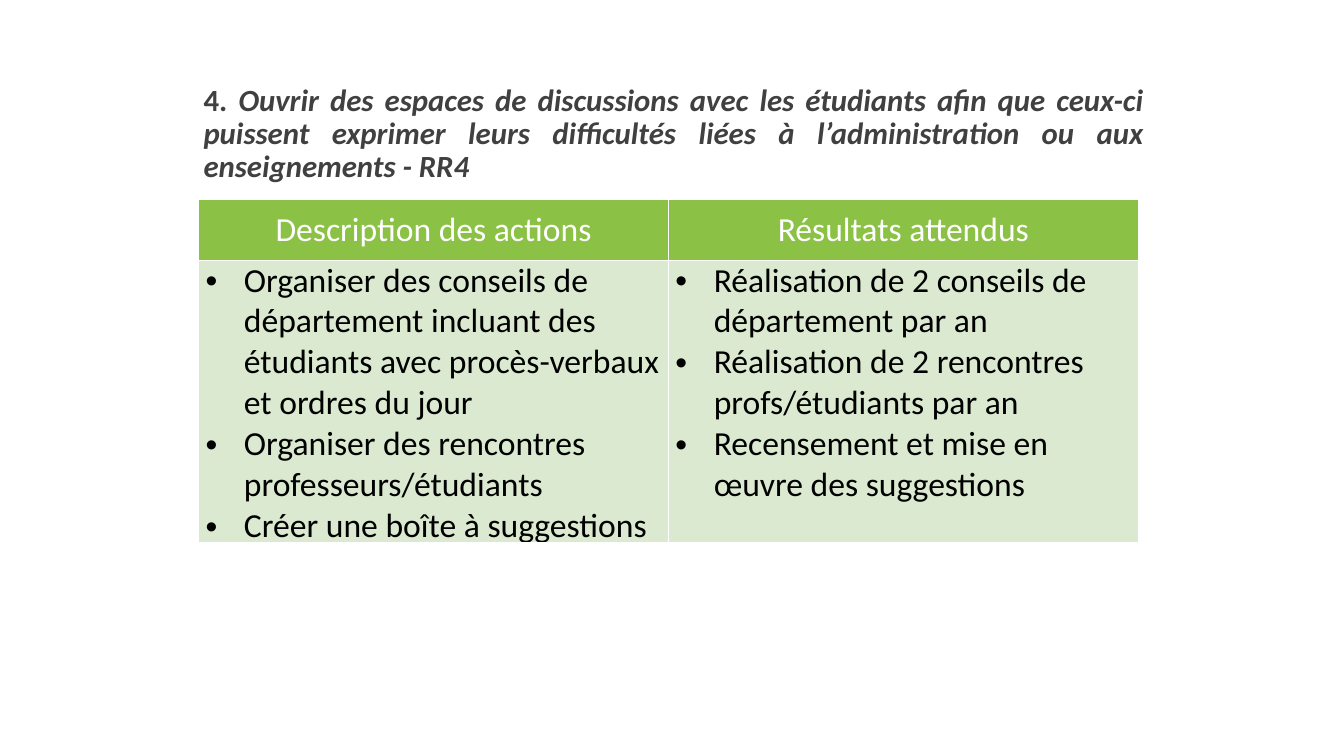
from lxml.etree import SubElement
from pptx import Presentation
from pptx.dml.color import RGBColor
from pptx.enum.text import MSO_ANCHOR, PP_ALIGN
from pptx.oxml.ns import qn
from pptx.util import Inches, Pt

WHITE = RGBColor(0xFF, 0xFF, 0xFF)
BLACK = RGBColor(0x00, 0x00, 0x00)
DARK_GREY = RGBColor(0x40, 0x40, 0x40)
GREEN = RGBColor(0x8B, 0xC1, 0x45)
PALE_GREEN = RGBColor(0xDA, 0xE9, 0xCF)
FONT = "Calibri"

OBJECTIVE_NUMBER = "4. "
OBJECTIVE = (
    "Ouvrir des espaces de discussions avec les étudiants afin que ceux-ci "
    "puissent exprimer leurs difficultés liées à l’administration ou aux "
    "enseignements - RR4"
)
COLUMNS = {
    "Description des actions": [
        "Organiser des conseils de département incluant des étudiants "
        "avec procès-verbaux et ordres du jour",
        "Organiser des rencontres professeurs/étudiants",
        "Créer une boîte à suggestions",
    ],
    "Résultats attendus": [
        "Réalisation de 2 conseils de département par an",
        "Réalisation de 2 rencontres profs/étudiants par an",
        "Recensement et mise en œuvre des suggestions",
    ],
}


def add_span(para, text, size, color, bold=False, italic=False):
    span = para.add_run()
    span.text = text
    font = span.font
    font.name, font.size, font.bold, font.italic = FONT, Pt(size), bold, italic
    font.color.rgb = color


def add_title(page, left, top, width, height):
    box = page.shapes.add_textbox(left, top, width, height)
    frame = box.text_frame
    frame.word_wrap = True
    frame.vertical_anchor = MSO_ANCHOR.MIDDLE
    para = frame.paragraphs[0]
    para.alignment = PP_ALIGN.JUSTIFY
    para.line_spacing = 0.9
    add_span(para, OBJECTIVE_NUMBER, 22, DARK_GREY, bold=True)
    add_span(para, OBJECTIVE, 22, DARK_GREY, bold=True, italic=True)


def set_bullet(para, indent):
    properties = para._p.get_or_add_pPr()
    properties.set("marL", str(indent))
    properties.set("indent", str(-indent))
    SubElement(properties, qn("a:buFont"), typeface="Arial")
    SubElement(properties, qn("a:buChar"), char="•")


def style_cell(cell, fill, side_margin, end_margin):
    """Set margins, white borders and fill; borders must precede the fill."""
    cell.margin_left = cell.margin_right = side_margin
    cell.margin_top = cell.margin_bottom = end_margin
    properties = cell._tc.get_or_add_tcPr()
    for side in ("lnL", "lnR", "lnT", "lnB"):
        line = SubElement(properties, qn(f"a:{side}"), w=str(Pt(1)))
        solid = SubElement(line, qn("a:solidFill"))
        SubElement(solid, qn("a:srgbClr"), val=str(WHITE))
    cell.fill.solid()
    cell.fill.fore_color.rgb = fill


def add_action_table(page, left, top, width, height):
    header_height = Inches(0.6)
    table = page.shapes.add_table(2, len(COLUMNS), left, top, width, height).table
    table.rows[0].height = header_height
    table.rows[1].height = height - header_height
    for column, (heading, items) in enumerate(COLUMNS.items()):
        header = table.cell(0, column)
        style_cell(header, GREEN, Inches(0.1), Inches(0.1))
        para = header.text_frame.paragraphs[0]
        para.alignment = PP_ALIGN.CENTER
        add_span(para, heading, 24, WHITE)

        body = table.cell(1, column)
        style_cell(body, PALE_GREEN, Inches(0.07), 0)
        frame = body.text_frame
        for index, item in enumerate(items):
            para = frame.add_paragraph() if index else frame.paragraphs[0]
            set_bullet(para, Inches(0.38))
            add_span(para, item, 24, BLACK)


def main():
    deck = Presentation()
    deck.slide_width, deck.slide_height = Inches(13.33), Inches(7.5)
    page = deck.slides.add_slide(deck.slide_layouts[6])
    add_title(page, Inches(1.92), Inches(0.75), Inches(9.52), Inches(1.17))
    add_action_table(page, Inches(1.97), Inches(1.98), Inches(9.32), Inches(3.4))
    deck.save("out.pptx")


if __name__ == "__main__":
    main()
